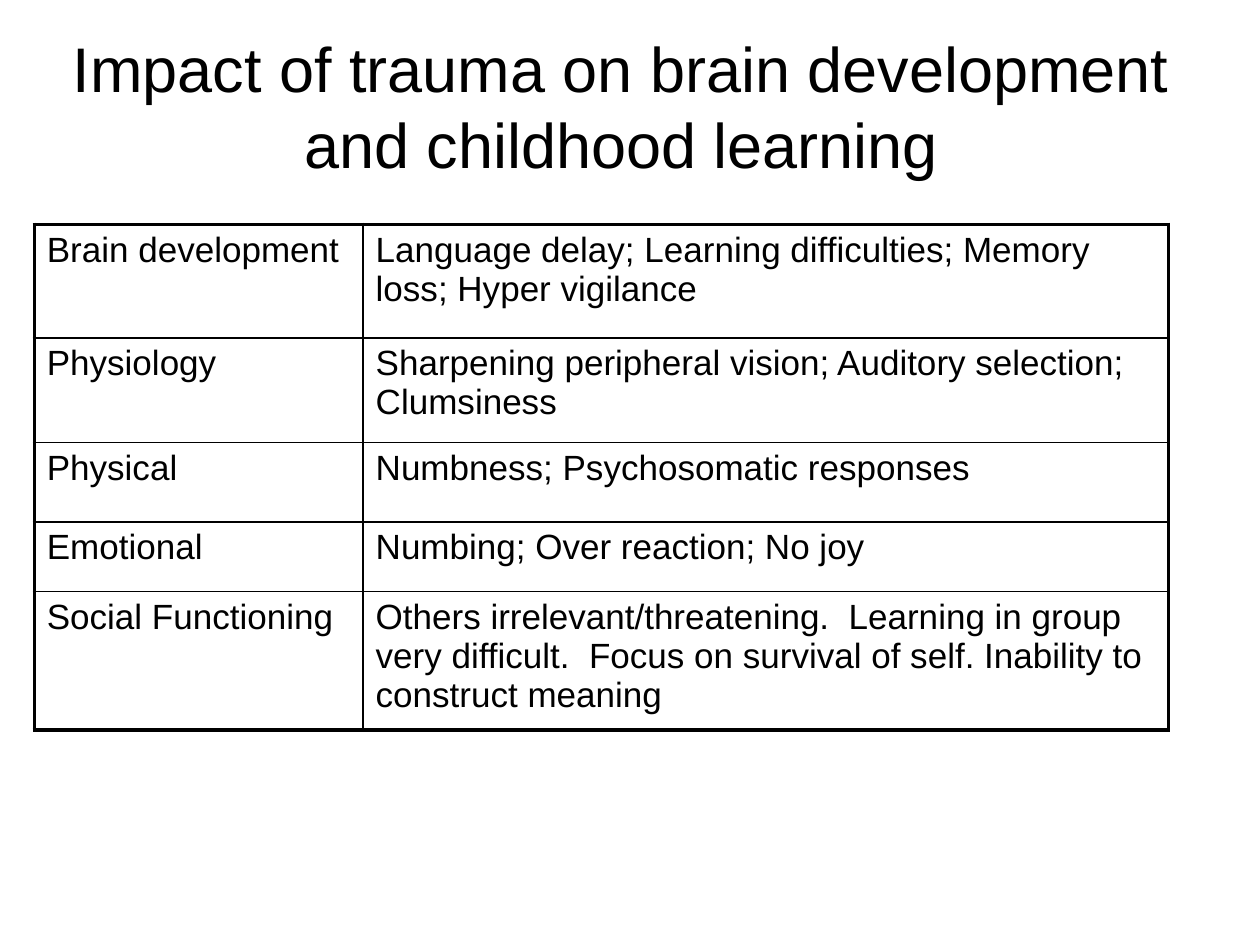
from lxml import etree
from pptx import Presentation
from pptx import util as u
from pptx.dml.color import RGBColor
from pptx.enum import text
from pptx.oxml.ns import qn

INK = "000000"
TITLE = "Impact of trauma on brain development and childhood learning"
ROWS = [
    (2.29, "Brain development",
     "Language delay; Learning difficulties; Memory loss; Hyper vigilance"),
    (2.11, "Physiology",
     "Sharpening peripheral vision; Auditory selection; Clumsiness"),
    (1.6, "Physical", "Numbness; Psychosomatic responses"),
    (1.4, "Emotional", "Numbing; Over reaction; No joy"),
    (2.79, "Social Functioning",
     "Others irrelevant/threatening.  Learning in group very difficult.  "
     "Focus on survival of self. Inability to construct meaning"),
]
COLS = [6.63, 16.23]
THICK, THIN = 2.25, 1


def color(code):
    return RGBColor.from_string(code)


def write(frame, words, size):
    para = frame.paragraphs[0]
    para.text = words
    para.font.name = "Arial"
    para.font.size = u.Pt(size)
    para.font.color.rgb = color(INK)
    return para


def add_title(slide):
    box = slide.shapes.add_textbox(u.Cm(1.09), u.Cm(0.53), u.Cm(22.86), u.Cm(3.18))
    frame = box.text_frame
    frame.word_wrap = True
    frame.vertical_anchor = text.MSO_ANCHOR.MIDDLE
    write(frame, TITLE, 36).alignment = text.PP_ALIGN.CENTER


def set_edges(cell, widths):
    props = cell._tc.get_or_add_tcPr()
    for spot, (side, width) in enumerate(widths.items()):
        line = etree.Element(qn(f"a:ln{side}"), w=str(u.Pt(width)))
        fill = etree.SubElement(line, qn("a:solidFill"))
        etree.SubElement(fill, qn("a:srgbClr"), val=INK)
        props.insert(spot, line)


def add_grid(slide):
    high = sum(row[0] for row in ROWS)
    frame = slide.shapes.add_table(len(ROWS), len(COLS), u.Cm(0.69), u.Cm(4.52),
                                   u.Cm(sum(COLS)), u.Cm(high))
    table = frame.table
    table.first_row = table.horz_banding = False
    for col, width in zip(table.columns, COLS):
        col.width = u.Cm(width)
    for r, (height, *words) in enumerate(ROWS):
        table.rows[r].height = u.Cm(height)
        for c, word in enumerate(words):
            cell = table.cell(r, c)
            cell.fill.background()
            write(cell.text_frame, word, 20)
            outer = {"L": c == 0, "R": c == len(COLS) - 1,
                     "T": r == 0, "B": r == len(ROWS) - 1}
            set_edges(cell, {side: THICK if edge else THIN
                             for side, edge in outer.items()})


def main():
    deck = Presentation()
    deck.slide_width, deck.slide_height = u.Cm(25.4), u.Cm(19.05)
    slide = deck.slides.add_slide(deck.slide_layouts[6])
    add_title(slide)
    add_grid(slide)
    deck.save("out.pptx")


if __name__ == "__main__":
    main()
